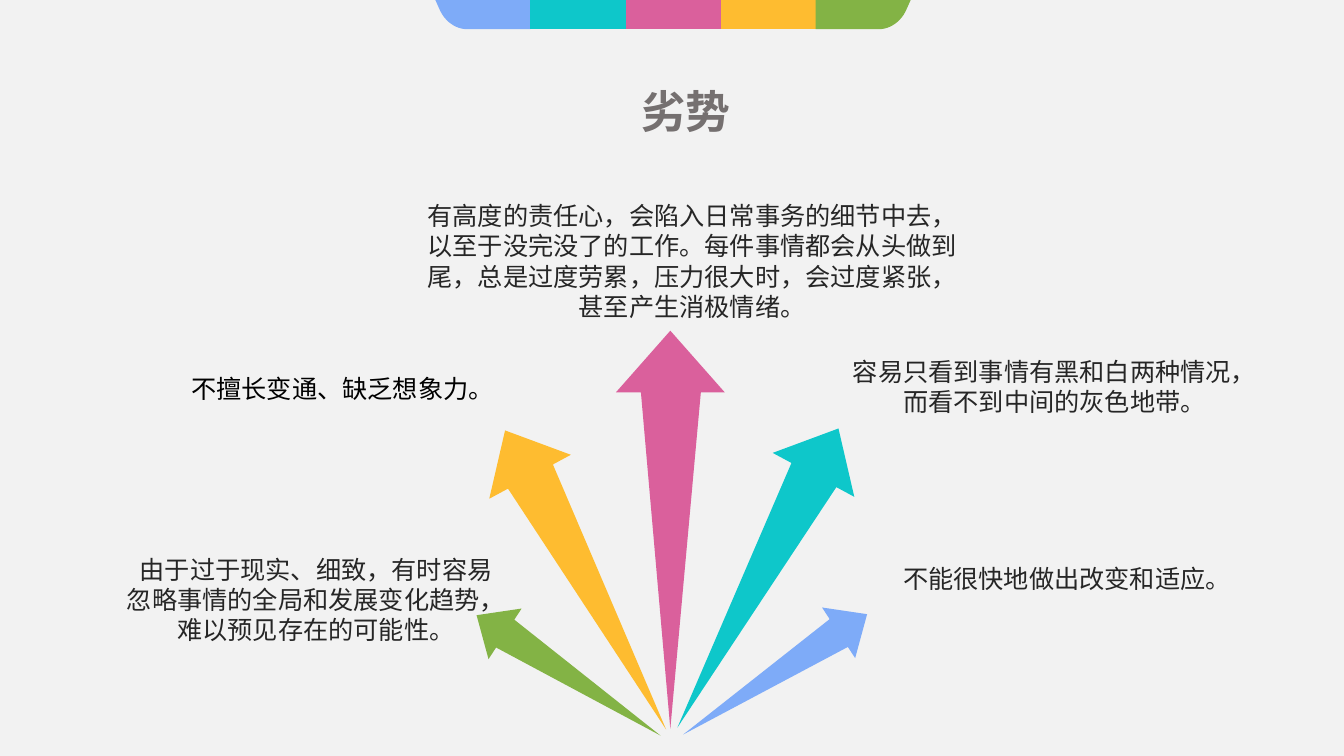
import pptx
import pptx.util
import pptx.dml.color
import pptx.enum.text
from lxml import etree

Pt = pptx.util.Pt
ALIGN = pptx.enum.text.PP_ALIGN
FONT = "Noto Sans CJK JP"
BLUE, CYAN, PINK, YELLOW, GREEN = "7EABF8", "0EC7CA", "DA609C", "FEBC30", "83B345"

# Box (left, top, width, height), rotation, colour
ARROWS = [
    ((439.9, 236.2, 77.8, 284.4), 0, PINK),
    ((508.3, 291.6, 66.2, 242.6), 28.3, CYAN),
    ((532.1, 403.2, 43.2, 157), 56.8, BLUE),
    ((385.2, 293, 66.2, 242.6), -28.3, YELLOW),
    ((384.5, 403.9, 43.2, 157), -56.8, GREEN),
]

# Box, lines, alignment, colour
NOTES = [
    ((602, 250.6, 302.4, 80.6),
     ["容易只看到事情有黑和白两种情况，", "而看不到中间的灰色地带。"], ALIGN.CENTER, "262626"),
    ((638, 398.9, 249, 59), ["不能很快地做出改变和适应。"], ALIGN.LEFT, "262626"),
    ((83.5, 392.4, 284.4, 72),
     ["由于过于现实、细致，有时容易", "忽略事情的全局和发展变化趋势，", "难以预见存在的可能性。"],
     ALIGN.CENTER, "262626"),
    ((296, 139.7, 396.7, 136.8),
     ["有高度的责任心，会陷入日常事务的细节中去，", "以至于没完没了的工作。每件事情都会从头做到",
      "尾，总是过度劳累，压力很大时，会过度紧张，", "甚至产生消极情绪。"], ALIGN.CENTER, "262626"),
    ((129.6, 262.8, 230.4, 28.8), ["不擅长变通、缺乏想象力。"], ALIGN.LEFT, "000000"),
]


def rgb(color):
    return pptx.dml.color.RGBColor.from_string(color)


def add_outline(s, points, color):
    """Add a filled polygon through points given in points."""
    start, *rest = [(Pt(x), Pt(y)) for x, y in points]
    builder = s.shapes.build_freeform(*start)
    builder.add_line_segments(rest, close=True)
    sp = builder.convert_to_shape()
    sp.shadow.inherit = False
    sp.fill.solid()
    sp.fill.fore_color.rgb = rgb(color)
    sp.line.fill.background()
    return sp


def write_lines(sp, box, lines, size, color, align, bold=False):
    sp.left, sp.top, sp.width, sp.height = map(Pt, box)
    tf = sp.text_frame
    tf.text = "\n".join(lines)
    tf.word_wrap = False
    tf.auto_size = pptx.enum.text.MSO_AUTO_SIZE.NONE
    tf.vertical_anchor = pptx.enum.text.MSO_ANCHOR.TOP
    for p in tf.paragraphs:
        p.alignment = align
        p.line_spacing = Pt(1.2 * size)
        p.space_before = Pt(0)
        for r in p.runs:
            r.font.size = Pt(size)
            r.font.bold = bold
            r.font.color.rgb = rgb(color)
            r.font.name = FONT
            ea = etree.SubElement(r.font._element, pptx.oxml.ns.qn("a:ea"))
            ea.set("typeface", FONT)


def rounded_corner(steps=12):
    """Sample the corner curve as offsets from the band's outer top corner."""
    curve = [(2.9, 6.5), (6.5, 15.1), (14.4, 20.9), (23, 20.9)]
    for i in range(steps + 1):
        t = i / steps
        weights = [(1 - t) ** 3, 3 * t * (1 - t) ** 2, 3 * t * t * (1 - t), t ** 3]
        yield tuple(sum(w * c[axis] for w, c in zip(weights, curve)) for axis in (0, 1))


def add_band(s, box):
    """Add the five-colour band with rounded outer bottom corners."""
    left, top, width, height = box
    colors = [BLUE, CYAN, PINK, YELLOW, GREEN]
    step = width / len(colors)
    end = [(0, 0), *rounded_corner(), (step, height), (step, 0)]
    middle = [(0, 0), (0, height), (step, height), (step, 0)]
    outlines = [end, middle, middle, middle, [(step - x, y) for x, y in end]]
    for i, (outline, color) in enumerate(zip(outlines, colors)):
        add_outline(s, [(left + i * step + x, top + y) for x, y in outline], color)


def add_arrow(s, box, angle, color):
    """Add an arrow that tapers to a point at its tail."""
    left, top, width, height = box
    head = 0.155
    outline = [(0.5, 0), (1, head), (0.78, head), (0.5, 1), (0.23, head), (0, head)]
    sp = add_outline(s, [(left + x * width, top + y * height) for x, y in outline], color)
    sp.rotation = angle


def add_weakness_slide(prs):
    s = prs.slides.add_slide(prs.slide_layouts[5])
    s.background.fill.solid()
    s.background.fill.fore_color.rgb = rgb("F2F2F2")
    add_band(s, (311, 0, 339.5, 20.9))
    write_lines(s.shapes.title, (450.7, 56.2, 87.1, 45.4), ["劣势"], 32, "757070",
                ALIGN.LEFT, bold=True)
    for box, angle, color in ARROWS:
        add_arrow(s, box, angle, color)
    for box, lines, align, color in NOTES:
        sp = s.shapes.add_textbox(*map(Pt, box))
        write_lines(sp, box, lines, 18, color, align)


def main():
    prs = pptx.Presentation()
    prs.slide_width, prs.slide_height = Pt(960), Pt(540)
    add_weakness_slide(prs)
    prs.save("out.pptx")


if __name__ == "__main__":
    main()
